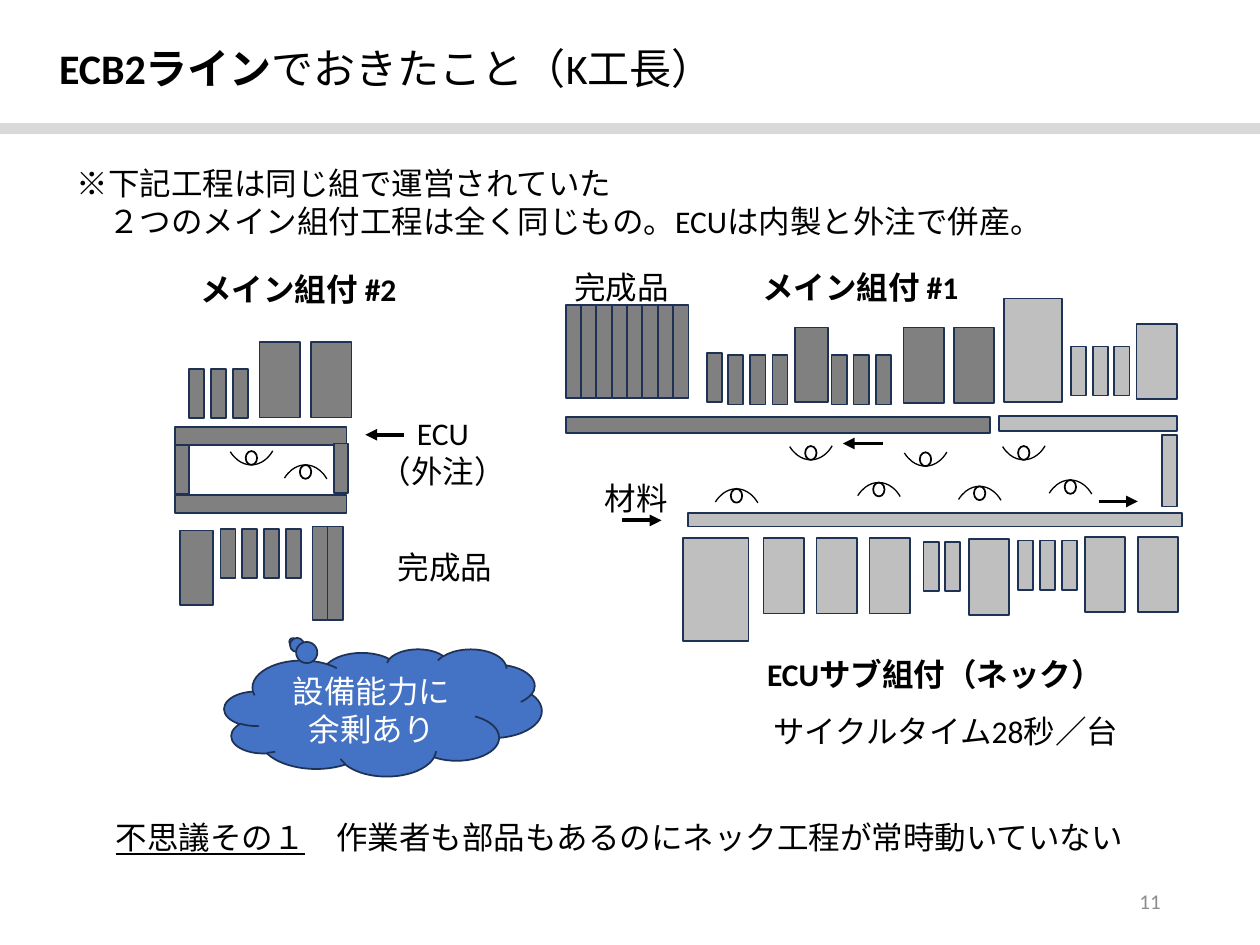
from pptx import Presentation
from pptx.dml.color import RGBColor
from pptx.enum.shapes import MSO_CONNECTOR, MSO_SHAPE
from pptx.enum.text import MSO_ANCHOR, PP_ALIGN
from pptx.oxml.ns import qn
from pptx.util import Inches, Pt
from lxml.etree import SubElement

BLACK = RGBColor(0, 0, 0)
WHITE = RGBColor(255, 255, 255)
NAVY = RGBColor(0x1E, 0x32, 0x56)
MAIN_GRAY = RGBColor(0x80, 0x80, 0x80)
SUB_GRAY = RGBColor(0xBF, 0xBF, 0xBF)
RULE_GRAY = RGBColor(0xD9, 0xD9, 0xD9)
PAGE_GRAY = RGBColor(0x8C, 0x8C, 0x8C)
CLOUD_BLUE = RGBColor(0x44, 0x72, 0xC4)

SMALL, MEDIUM, LARGE = (0.12, 0.39), (0.26, 0.59), (0.32, 0.6)
TALL, STOCK, NECK = (0.46, 0.82), (0.12, 0.74), (0.52, 0.82)

# (left, top, pitch, count, size)
MAIN_MACHINES = [
    (4.49, 2.42, 0.122, 8, STOCK),
    (5.61, 2.8, 0, 1, SMALL),
    (5.78, 2.82, 0.175, 3, SMALL),
    (6.31, 2.6, 0, 1, MEDIUM),
    (6.6, 2.82, 0.175, 3, SMALL),
    (7.17, 2.6, 0.4, 2, LARGE),
    (1.5, 2.93, 0.175, 3, SMALL),
    (2.06, 2.715, 0.41, 2, LARGE),
    (1.43, 4.21, 0, 1, MEDIUM),
    (1.75, 4.2, 0.173, 4, SMALL),
    (2.48, 4.18, 0.12, 2, STOCK),
]
SUB_MACHINES = [
    (7.97, 2.37, 0, 1, TALL),
    (8.5, 2.75, 0.172, 3, SMALL),
    (9.02, 2.57, 0, 1, LARGE),
    (5.42, 4.27, 0, 1, NECK),
    (6.06, 4.27, 0.42, 3, LARGE),
    (7.33, 4.3, 0.17, 2, SMALL),
    (7.69, 4.28, 0, 1, LARGE),
    (8.08, 4.29, 0.175, 3, SMALL),
    (8.61, 4.26, 0.42, 2, LARGE),
]
MAIN_BENCHES = [
    (4.49, 3.31, 3.37, 0.13), (1.39, 3.39, 1.36, 0.14), (1.39, 3.93, 1.36, 0.14),
    (1.39, 3.53, 0.11, 0.39), (2.65, 3.52, 0.11, 0.39),
]
SUB_BENCHES = [(7.93, 3.3, 1.41, 0.12), (9.22, 3.45, 0.12, 0.57), (5.46, 4.07, 3.92, 0.11)]

WORKERS_FACING_DOWN = [(6.76, 3.83), (7.56, 3.86), (8.28, 3.81), (2.21, 3.69), (5.63, 3.88)]
WORKERS_FACING_UP = [(7.91, 3.08), (7.13, 3.13), (1.78, 3.12), (6.22, 3.08)]
ARROWS = [(7.01, 3.52, 6.69), (8.72, 3.98, 9.03), (4.94, 4.13, 5.25), (3.21, 3.45, 2.9)]

# (box, paragraphs of (text, run format), paragraph format)
BOLD, PLAIN = {"bold": True}, {}
CENTER = {"alignment": PP_ALIGN.CENTER}
TEXTS = [
    ((0.37, 0.29, 8.45, 0.5),
     [[("ECB2ライン", {"bold": True, "size": Pt(24)}),
       ("でおきたこと（K工長）", {"size": Pt(24)})]], {}),
    ((0.51, 1.25, 8.52, 0.71), [[("※下記工程は同じ組で運営されていた", PLAIN)],
     [("２つのメイン組付工程は全く同じもの。ECUは内製と外注で併産。", PLAIN)]], {}),
    ((1.49, 2.09, 2.82, 0.4), [[("メイン組付 #2", BOLD)]], {}),
    ((5.95, 2.08, 2.82, 0.4), [[("メイン組付 #1", BOLD)]], {}),
    ((4.46, 2.08, 1.17, 0.4), [[("完成品", PLAIN)]], {}),
    ((3.06, 4.3, 1.17, 0.4), [[("完成品", PLAIN)]], {}),
    ((4.7, 3.75, 0.79, 0.3), [[("材料", PLAIN)]], {}),
    ((2.9, 3.24, 1.23, 0.71), [[("ECU", PLAIN)], [("（外注）", PLAIN)]], CENTER),
    ((5.99, 5.15, 3.7, 0.4), [[("ECUサブ組付（ネック）", BOLD)]], {}),
    ((6.04, 5.6, 4.14, 0.4), [[("サイクルタイム28秒／台", PLAIN)]], {}),
    ((0.82, 6.44, 8.37, 0.4),
     [[("不思議その１", {"underline": True}),
       ("　作業者も部品もあるのにネック工程が常時動いていない", PLAIN)]], {}),
]
PAGE_NUMBER = ((7.06, 6.95, 2.25, 0.4), "11")
CLOUD = ((1.78, 5.15, 2.52, 1.01), "設備能力に余剰あり")


def apply_format(target, values):
    for name, value in values.items():
        setattr(target, name, value)


def add_run(paragraph, text, values, color=BLACK):
    run = paragraph.add_run()
    run.text = text
    apply_format(run.font, {"name": "Calibri", "size": Pt(18), **values})
    run.font.color.rgb = color


def add_text(slide, box, paragraphs, paragraph_format, color=BLACK):
    frame = slide.shapes.add_textbox(*map(Inches, box)).text_frame
    frame.word_wrap = True
    for index, runs in enumerate(paragraphs):
        paragraph = frame.add_paragraph() if index else frame.paragraphs[0]
        apply_format(paragraph, paragraph_format)
        for text, values in runs:
            add_run(paragraph, text, values, color)
    return frame


def add_shape(slide, kind, box, fill=None, line=NAVY, width=1):
    shape = slide.shapes.add_shape(kind, *map(Inches, box))
    shape.shadow.inherit = False
    if fill is None:
        shape.fill.background()
    else:
        shape.fill.solid()
        shape.fill.fore_color.rgb = fill
    shape.line.color.rgb = line
    shape.line.width = Pt(width)
    return shape


def add_machines(slide, rows, fill):
    for left, top, pitch, count, size in rows:
        for index in range(count):
            add_shape(slide, MSO_SHAPE.RECTANGLE, (left + index * pitch, top, *size), fill)


def add_worker(slide, left, top, facing_up):
    arms = add_shape(slide, MSO_SHAPE.ARC, (left, top, 0.43, 0.57), None, BLACK, 0.75)
    arms.adjustments[0] = 136.354
    arms.adjustments[1] = 188.711
    if facing_up:
        arms._element.spPr.find(qn("a:xfrm")).set("flipV", "1")
    head_top = top + (0.46 if facing_up else 0)
    add_shape(slide, MSO_SHAPE.OVAL, (left + 0.17, head_top, 0.09, 0.11), None, BLACK)


def add_line(slide, start, end, color, width, arrow=False):
    connector = slide.shapes.add_connector(
        MSO_CONNECTOR.STRAIGHT, *map(Inches, (*start, *end)))
    connector.line.color.rgb = color
    connector.line.width = Pt(width)
    if arrow:
        SubElement(connector.line._get_or_add_ln(), qn("a:tailEnd"), type="triangle")
    SubElement(connector._element.spPr, qn("a:effectLst"))


def main():
    presentation = Presentation()
    presentation.slide_width, presentation.slide_height = Inches(10), Inches(7.5)
    slide = presentation.slides.add_slide(presentation.slide_layouts[6])

    add_line(slide, (0, 1.02), (10, 1.02), RULE_GRAY, 6)
    for machines, benches, fill in (
        (MAIN_MACHINES, MAIN_BENCHES, MAIN_GRAY),
        (SUB_MACHINES, SUB_BENCHES, SUB_GRAY),
    ):
        add_machines(slide, machines, fill)
        for box in benches:
            add_shape(slide, MSO_SHAPE.RECTANGLE, box, fill)
    for workers, facing_up in ((WORKERS_FACING_DOWN, False), (WORKERS_FACING_UP, True)):
        for left, top in workers:
            add_worker(slide, left, top, facing_up)
    for start, top, end in ARROWS:
        add_line(slide, (start, top), (end, top), BLACK, 2.25, arrow=True)

    cloud_box, cloud_text = CLOUD
    cloud = add_shape(slide, MSO_SHAPE.CLOUD_CALLOUT, cloud_box, CLOUD_BLUE)
    cloud.adjustments[0], cloud.adjustments[1] = -0.284, -0.557
    cloud.text_frame.word_wrap = True
    cloud.text_frame.vertical_anchor = MSO_ANCHOR.MIDDLE
    paragraph = cloud.text_frame.paragraphs[0]
    apply_format(paragraph, CENTER)
    add_run(paragraph, cloud_text, {}, WHITE)

    frames = [add_text(slide, *text) for text in TEXTS]
    note_second_line = frames[1].paragraphs[1]
    note_second_line._p.get_or_add_pPr().set("marL", str(Inches(0.25)))
    page_box, page_text = PAGE_NUMBER
    page = add_text(slide, page_box, [[(page_text, {"size": Pt(12)})]],
                    {"alignment": PP_ALIGN.RIGHT}, PAGE_GRAY)
    page.vertical_anchor = MSO_ANCHOR.MIDDLE
    presentation.save("out.pptx")


if __name__ == "__main__":
    main()
